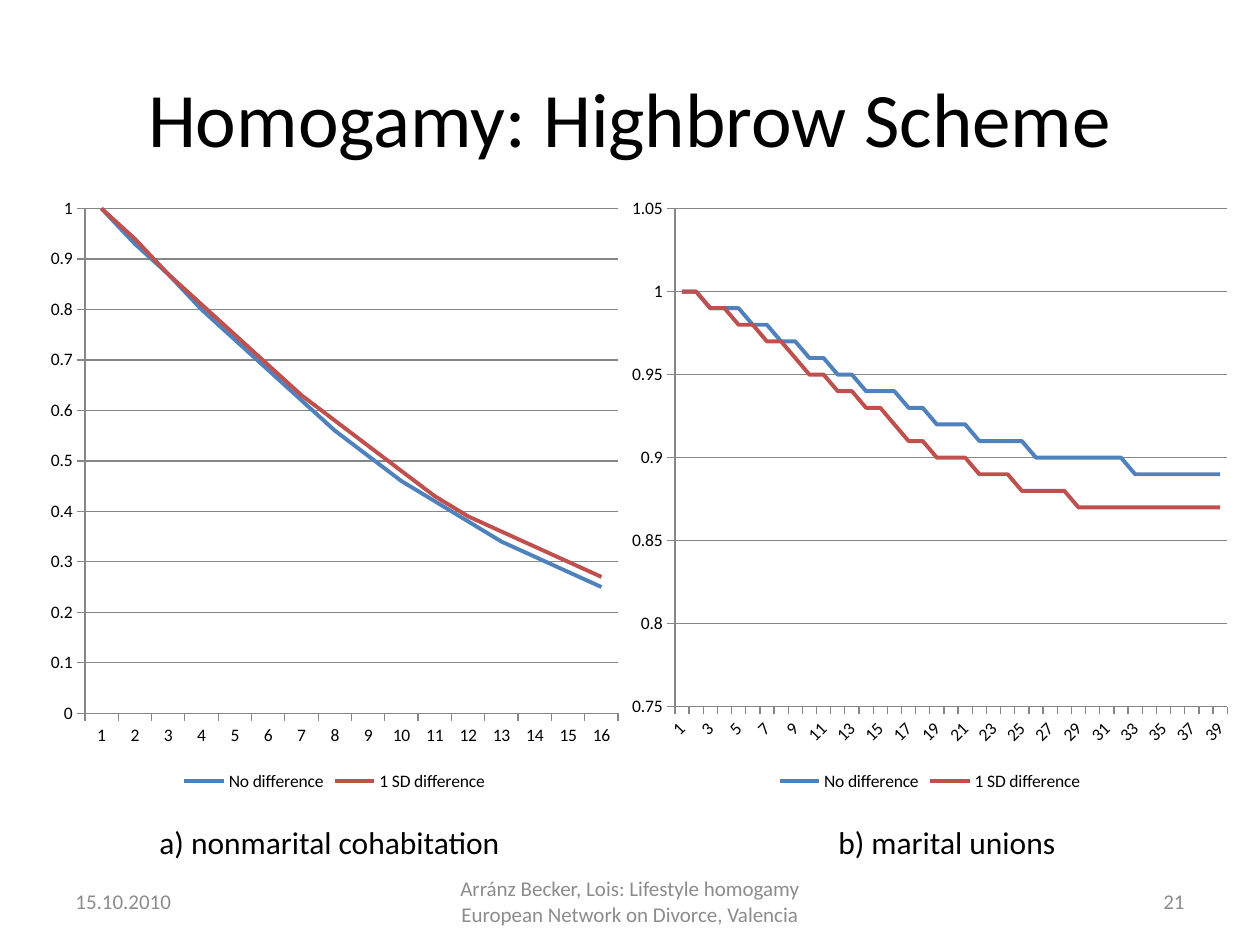
import pptx
import pptx.chart.data
import pptx.dml.color
import pptx.enum.chart
import pptx.enum.text
import pptx.util

Pt = pptx.util.Pt
Color = pptx.dml.color.RGBColor.from_string
Align = pptx.enum.text.PP_ALIGN
Anchor = pptx.enum.text.MSO_ANCHOR
TickMark = pptx.enum.chart.XL_TICK_MARK

THEME = {
    "font": "Calibri",
    "ink": "000000", "muted": "8C8C8C", "rule": "868686",
    "series": ("4F81BD", "C0504D"),
    "title": 44, "caption": 18, "footer": 12, "chart": 10,
}

TITLE = "Homogamy: Highbrow Scheme"

# Text, left, width, alignment
CAPTIONS = [
    ("a) nonmarital cohabitation", 84, 230, Align.LEFT),
    ("b) marital unions", 472, 169, Align.LEFT),
]
FOOTERS = [
    ("15.10.2010", 36, 168, Align.LEFT),
    ("Arránz Becker, Lois: Lifestyle homogamy European Network on Divorce, Valencia",
     246, 228, Align.CENTER),
    ("21", 516, 168, Align.RIGHT),
]

# Survival curves by year of the union
CHARTS = [
    {
        "left": 22.3, "width": 337.7, "scale": (0, 1, 0.1),
        "curves": {
            "No difference": [1, 0.93, 0.87, 0.8, 0.74, 0.68, 0.62, 0.56, 0.51, 0.46,
                              0.42, 0.38, 0.34, 0.31, 0.28, 0.25],
            "1 SD difference": [1, 0.94, 0.87, 0.81, 0.75, 0.69, 0.63, 0.58, 0.53, 0.48,
                                0.43, 0.39, 0.36, 0.33, 0.3, 0.27],
        },
    },
    {
        "left": 354.2, "width": 354.2, "scale": (0.75, 1.05, 0.05),
        "curves": {
            "No difference": [1, 1, 0.99, 0.99, 0.99, 0.98, 0.98, 0.97, 0.97, 0.96,
                              0.96, 0.95, 0.95, 0.94, 0.94, 0.94, 0.93, 0.93, 0.92, 0.92,
                              0.92, 0.91, 0.91, 0.91, 0.91, 0.9, 0.9, 0.9, 0.9, 0.9,
                              0.9, 0.9, 0.89, 0.89, 0.89, 0.89, 0.89, 0.89, 0.89],
            "1 SD difference": [1, 1, 0.99, 0.99, 0.98, 0.98, 0.97, 0.97, 0.96, 0.95,
                                0.95, 0.94, 0.94, 0.93, 0.93, 0.92, 0.91, 0.91, 0.9, 0.9,
                                0.9, 0.89, 0.89, 0.89, 0.88, 0.88, 0.88, 0.88, 0.87, 0.87,
                                0.87, 0.87, 0.87, 0.87, 0.87, 0.87, 0.87, 0.87, 0.87],
        },
    },
]
CHART_TOP, CHART_HEIGHT = 106.6, 348.5
CAPTION_TOP, FOOTER_TOP, LINE_HEIGHT = 466.6, 500.5, 28.8


def set_font(font, size, color):
    font.name = THEME["font"]
    font.size = Pt(size)
    font.color.rgb = Color(color)


def write_text(box, text, *, size, color, align, anchor=Anchor.MIDDLE):
    frame = box.text_frame
    frame.word_wrap = True
    frame.vertical_anchor = anchor
    para = frame.paragraphs[0]
    para.alignment = align
    span = para.add_run()
    span.text = text
    set_font(span.font, size, color)


def add_text_row(page, row, top, **form):
    for text, left, width, align in row:
        box = page.shapes.add_textbox(Pt(left), Pt(top), Pt(width), Pt(LINE_HEIGHT))
        write_text(box, text, align=align, **form)


def style_line(line, color, width):
    line.color.rgb = Color(color)
    line.width = Pt(width)


def add_survival_chart(page, left, width, scale, curves):
    data = pptx.chart.data.CategoryChartData()
    years = len(curves["No difference"])
    data.categories = [str(year) for year in range(1, years + 1)]
    for name, values in curves.items():
        data.add_series(name, values)
    chart = page.shapes.add_chart(
        pptx.enum.chart.XL_CHART_TYPE.LINE,
        Pt(left), Pt(CHART_TOP), Pt(width), Pt(CHART_HEIGHT), data).chart

    set_font(chart.font, THEME["chart"], THEME["ink"])
    chart.has_title = False
    chart.has_legend = True
    chart.legend.position = pptx.enum.chart.XL_LEGEND_POSITION.BOTTOM
    chart.legend.include_in_layout = False
    chart.plots[0].vary_by_categories = False
    for series, color in zip(chart.plots[0].series, THEME["series"]):
        series.smooth = False
        series.marker.style = pptx.enum.chart.XL_MARKER_STYLE.NONE
        style_line(series.format.line, color, 2.25)

    for axis in (chart.category_axis, chart.value_axis):
        axis.major_tick_mark = TickMark.OUTSIDE
        axis.minor_tick_mark = TickMark.NONE
        style_line(axis.format.line, THEME["rule"], 0.75)
    values = chart.value_axis
    values.minimum_scale, values.maximum_scale, values.major_unit = scale
    values.tick_labels.number_format = "General"
    values.tick_labels.number_format_is_linked = False
    values.has_major_gridlines = True
    style_line(values.major_gridlines.format.line, THEME["rule"], 0.75)


def main():
    deck = pptx.Presentation()
    deck.slide_width, deck.slide_height = Pt(720), Pt(540)
    page = deck.slides.add_slide(deck.slide_layouts.get_by_name("Title Only"))

    title = page.shapes.title
    title.left, title.top, title.width, title.height = Pt(36), Pt(21.6), Pt(648), Pt(90)
    write_text(title, TITLE, size=THEME["title"], color=THEME["ink"], align=Align.CENTER)

    add_text_row(page, FOOTERS, FOOTER_TOP, size=THEME["footer"], color=THEME["muted"])
    add_text_row(page, CAPTIONS, CAPTION_TOP, size=THEME["caption"], color=THEME["ink"],
                 anchor=Anchor.TOP)
    for chart in CHARTS:
        add_survival_chart(page, **chart)
    deck.save("out.pptx")


if __name__ == "__main__":
    main()
